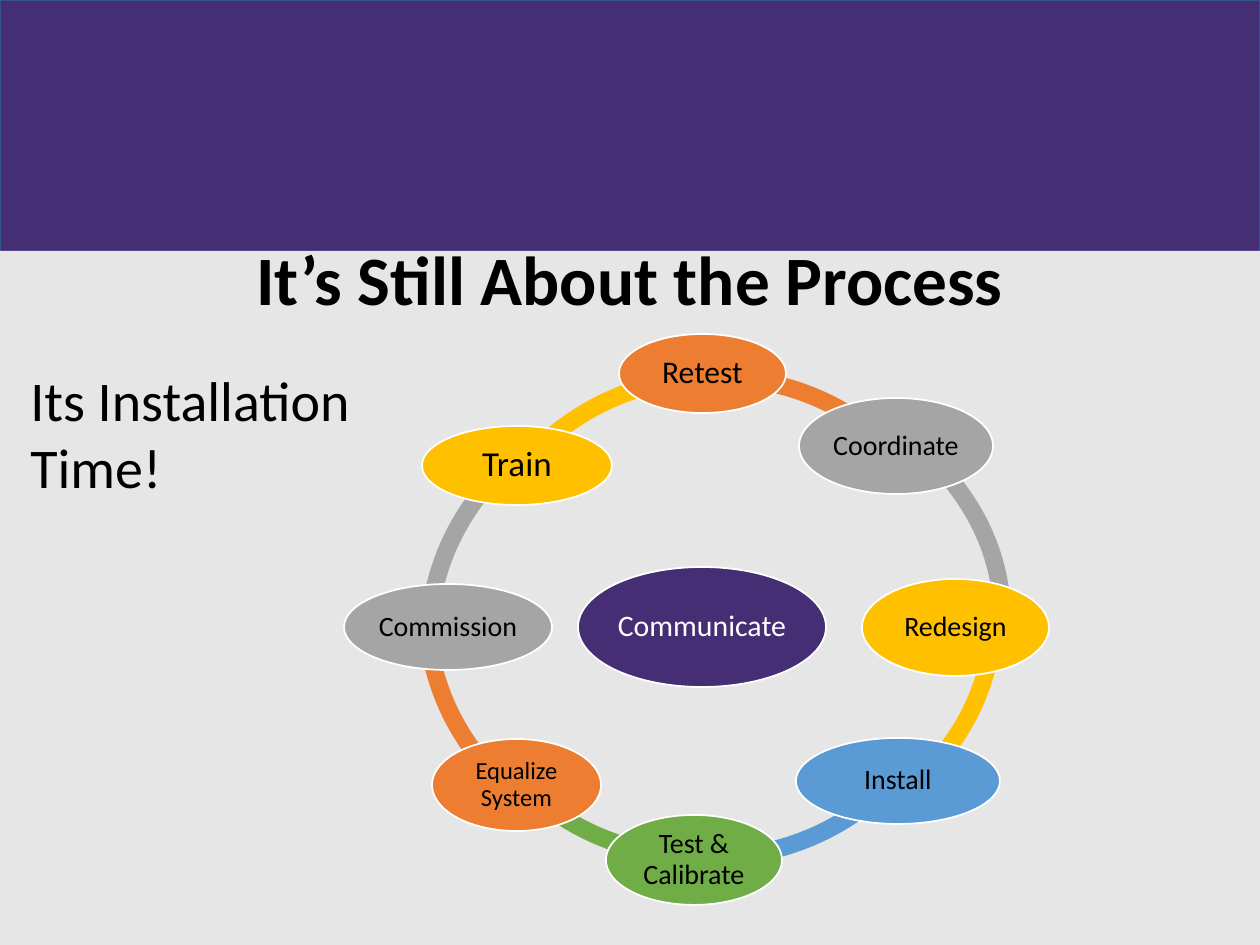
from pptx import Presentation
from pptx.dml.color import RGBColor
from pptx.enum.shapes import MSO_SHAPE
from pptx.enum.text import MSO_ANCHOR, MSO_AUTO_SIZE, PP_ALIGN
from pptx.util import Pt

SCALE = 914400 / 126
RECTANGLE, OVAL, BLOCK_ARC = MSO_SHAPE.RECTANGLE, MSO_SHAPE.OVAL, MSO_SHAPE.BLOCK_ARC
CENTER, MIDDLE = PP_ALIGN.CENTER, MSO_ANCHOR.MIDDLE
GROW = MSO_AUTO_SIZE.SHAPE_TO_FIT_TEXT
FONT = "Calibri"
RING_HEIGHT = 517
RING_THICKNESS = 0.034
COLORS = {
    "background": "E7E6E6",
    "purple": "462E75",
    "banner_line": "325491",
    "orange": "ED7D31",
    "gray": "A5A5A5",
    "yellow": "FFC000",
    "blue": "5B9BD5",
    "green": "70AD47",
    "white": "FFFFFF",
    "black": "000000",
}
# left, top, width, start angle, end angle, colour
ARCS = [
    (110, 36, 517, 219.72, 267.8, "yellow"),
    (76, 48, 564, 182.52, 223.13, "gray"),
    (74, 20, 566, 136.78, 176.3, "orange"),
    (94, 15, 517, 90.65, 135.36, "green"),
    (111, 16, 517, 43.17, 94.33, "blue"),
    (28, 26, 630, 1.66, 39.31, "yellow"),
    (28, 26, 639, 319.81, 3.92, "gray"),
    (116, 36, 517, 266.35, 314.65, "orange"),
]
STEPS = [
    ("Communicate", (234, 234, 248, 120), "purple", 17, "white"),
    ("Retest", (275, 1, 167, 79), "orange", 18, "black"),
    ("Coordinate", (455, 65, 194, 96), "gray", 16, "black"),
    ("Redesign", (518, 246, 187, 97), "yellow", 16, "black"),
    ("Install", (452, 405, 204, 86), "blue", 16, "black"),
    ("Test & Calibrate", (262, 482, 176, 90), "green", 16, "black"),
    ("Equalize System", (88, 406, 169, 92), "orange", 14, "black"),
    ("Commission", (0, 251, 208, 86), "gray", 16, "black"),
    ("Train", (78, 93, 190, 79), "yellow", 20, "black"),
]


def px(length):
    """Turn px into EMU."""
    return round(length * SCALE)


def color(name):
    """Return the named colour."""
    return RGBColor.from_string(COLORS[name])


def add_filled_shape(slide, kind, box, fill, line=None):
    """Add a flat preset shape, outlined if a line colour is named."""
    shape = slide.shapes.add_shape(kind, *map(px, box))
    shape.shadow.inherit = False
    shape.fill.solid()
    shape.fill.fore_color.rgb = color(fill)
    if line:
        shape.line.color.rgb = color(line)
        shape.line.width = Pt(1)
    else:
        shape.line.fill.background()
    return shape


def write(shape, text, size, font_color="black", bold=False, align=None, spacing=None):
    """Write one wrapped paragraph into a shape."""
    frame = shape.text_frame
    frame.word_wrap = True
    frame.text = text
    paragraph = frame.paragraphs[0]
    paragraph.alignment = align
    paragraph.line_spacing = spacing
    font = paragraph.runs[0].font
    font.name, font.size, font.bold = FONT, Pt(size), bold
    font.color.rgb = color(font_color)
    return frame


def add_header(slide, box):
    """Place the banner with the title strip below it."""
    left, top, width, height = box
    add_filled_shape(slide, RECTANGLE, (left, top, width, 252), "purple", "banner_line")
    title = add_filled_shape(slide, RECTANGLE, (left, top + 251, width, height - 251), "background")
    frame = write(title, "It’s Still About the Process", 39.6, bold=True, align=CENTER, spacing=0.9)
    frame.vertical_anchor = MIDDLE


def add_message(slide, box):
    """Place the message beside the cycle."""
    message = slide.shapes.add_textbox(*map(px, box))
    frame = write(message, "Its Installation Time!", 32)
    frame.auto_size = GROW


def add_cycle(slide, box):
    """Place the ring of arcs and the steps on it."""
    left, top = box[:2]
    for x, y, width, start, end, fill in ARCS:
        arc = add_filled_shape(slide, BLOCK_ARC, (left + x, top + y, width, RING_HEIGHT), fill)
        for index, value in enumerate((start * 0.6, end * 0.6, RING_THICKNESS)):
            arc.adjustments[index] = value
    for text, (x, y, width, height), fill, size, font_color in STEPS:
        step = add_filled_shape(slide, OVAL, (left + x, top + y, width, height), fill, "white")
        frame = write(step, text, size, font_color, align=CENTER, spacing=0.9)
        frame.vertical_anchor = MIDDLE
        frame.margin_left = frame.margin_right = px(3)
        frame.margin_top = frame.margin_bottom = px(3)


def main():
    """Build and save the slide."""
    presentation = Presentation()
    presentation.slide_width, presentation.slide_height = px(1260), px(945)
    slide = presentation.slides.add_slide(presentation.slide_layouts[6])
    slide.background.fill.solid()
    slide.background.fill.fore_color.rgb = color("background")
    add_header(slide, (0, 0, 1260, 315))
    add_cycle(slide, (344, 333, 706, 572))
    add_message(slide, (18, 359, 355, 149))
    presentation.save("out.pptx")


if __name__ == "__main__":
    main()
